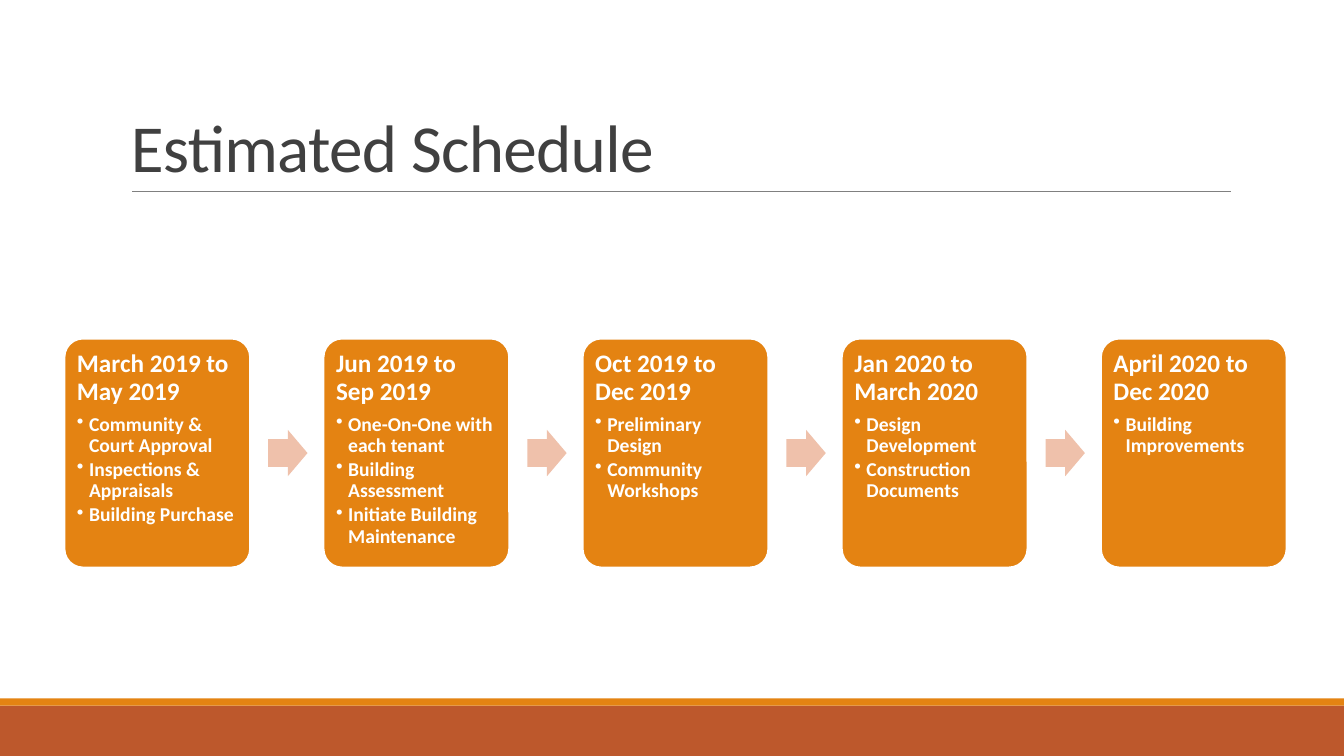
from dataclasses import dataclass

from lxml import etree
from pptx import Presentation
from pptx import util as u
from pptx.dml.color import RGBColor
from pptx.enum import shapes, text
from pptx.oxml import ns


@dataclass(frozen=True)
class Theme:
    font: str = "Calibri"
    orange: str = "E48312"
    rust: str = "BD582C"
    peach: str = "EFC1AB"
    white: str = "FFFFFF"
    ink: str = "404040"
    rule: str = "808080"
    title_size: int = 48
    period_size: int = 18
    task_size: int = 14


THEME = Theme()

# Phases of the schedule: period and its tasks
PHASES = [
    ("March 2019 to May 2019",
     ["Community & Court Approval", "Inspections & Appraisals", "Building Purchase"]),
    ("Jun 2019 to Sep 2019",
     ["One-On-One with each tenant", "Building Assessment", "Initiate Building Maintenance"]),
    ("Oct 2019 to Dec 2019", ["Preliminary Design", "Community Workshops"]),
    ("Jan 2020 to March 2020", ["Design Development", "Construction Documents"]),
    ("April 2020 to Dec 2020", ["Building Improvements"]),
]

# Card row, in inches
CARD_LEFT, CARD_TOP, CARD_WIDTH, CARD_HEIGHT = 0.64, 3.36, 1.84, 2.27
CARD_PITCH = 2.57
ARROW_OFFSET, ARROW_WIDTH, ARROW_HEIGHT = 2.02, 0.39, 0.46
CARD_INSET = 0.07
TASK_INDENT = 0.12


def set_values(target, values):
    for name, value in values.items():
        setattr(target, name, value)


def box(left, top, width, height):
    return [u.Inches(n) for n in (left, top, width, height)]


def add_block(slide, preset, area, fill, adjustments=(), outline=None):
    block = slide.shapes.add_shape(preset, *box(*area))
    block.shadow.inherit = False
    block.fill.solid()
    block.fill.fore_color.rgb = RGBColor.from_string(fill)
    for i, value in enumerate(adjustments):
        block.adjustments[i] = value
    if outline:
        block.line.color.rgb = RGBColor.from_string(outline)
        block.line.width = u.Pt(1.25)
    else:
        block.line.fill.background()
    return block


def set_frame(frame, anchor, insets):
    sides = ("margin_left", "margin_top", "margin_right", "margin_bottom")
    set_values(frame, {"word_wrap": True, "vertical_anchor": anchor,
                       **{side: u.Inches(n) for side, n in zip(sides, insets)}})


def write(paragraph, words, size, color, bold=False, **layout):
    set_values(paragraph, {"alignment": text.PP_ALIGN.LEFT, **layout})
    run = paragraph.add_run()
    run.text = words
    set_values(run.font, {"name": THEME.font, "size": u.Pt(size), "bold": bold})
    run.font.color.rgb = RGBColor.from_string(color)
    return run


def add_bullet(paragraph):
    props = paragraph._p.get_or_add_pPr()
    indent = u.Inches(TASK_INDENT)
    props.set("marL", str(indent))
    props.set("indent", str(-indent))
    etree.SubElement(props, ns.qn("a:buChar")).set("char", "•")


def add_title(slide, words):
    title = slide.shapes.add_textbox(*box(1.2, 0.31, 11, 1.59))
    set_frame(title.text_frame, text.MSO_ANCHOR.BOTTOM, (0.1, 0.05, 0.1, 0.05))
    run = write(title.text_frame.paragraphs[0], words, THEME.title_size,
                THEME.ink, line_spacing=0.85)
    run._r.get_or_add_rPr().set("spc", "-50")


def add_rule(slide):
    rule = slide.shapes.add_connector(shapes.MSO_CONNECTOR.STRAIGHT,
                                      *box(1.31, 1.9, 12.21, 1.9))
    rule.line.color.rgb = RGBColor.from_string(THEME.rule)
    rule.line.width = u.Pt(0.5)
    etree.SubElement(rule._element.spPr, ns.qn("a:effectLst"))


def add_phase(slide, left, period, tasks):
    card = add_block(slide, shapes.MSO_SHAPE.ROUNDED_RECTANGLE,
                     (left, CARD_TOP, CARD_WIDTH, CARD_HEIGHT),
                     THEME.orange, [0.1], THEME.white)
    frame = card.text_frame
    set_frame(frame, text.MSO_ANCHOR.TOP, [CARD_INSET] * 4)
    write(frame.paragraphs[0], period, THEME.period_size, THEME.white, True,
          line_spacing=0.9, space_after=u.Pt(6.3))
    for task in tasks:
        item = frame.add_paragraph()
        write(item, task, THEME.task_size, THEME.white, True,
              level=1, line_spacing=0.9, space_after=u.Pt(2.1))
        add_bullet(item)


def add_arrow(slide, left):
    top = CARD_TOP + (CARD_HEIGHT - ARROW_HEIGHT) / 2
    add_block(slide, shapes.MSO_SHAPE.RIGHT_ARROW,
              (left, top, ARROW_WIDTH, ARROW_HEIGHT), THEME.peach, [0.6, 0.5])


def main():
    deck = Presentation()
    set_values(deck, {"slide_width": u.Inches(13.33), "slide_height": u.Inches(7.5)})
    slide = deck.slides.add_slide(deck.slide_layouts[6])

    # Footer bands
    for top, height, color in ((7, 0.5, THEME.rust), (6.93, 0.07, THEME.orange)):
        add_block(slide, shapes.MSO_SHAPE.RECTANGLE, (0, top, 13.33, height), color)

    # Heading
    add_rule(slide)
    add_title(slide, "Estimated Schedule")

    # Phases with an arrow between neighbours
    for i, (period, tasks) in enumerate(PHASES):
        left = CARD_LEFT + i * CARD_PITCH
        add_phase(slide, left, period, tasks)
        if i < len(PHASES) - 1:
            add_arrow(slide, left + ARROW_OFFSET)

    deck.save("out.pptx")


if __name__ == "__main__":
    main()
